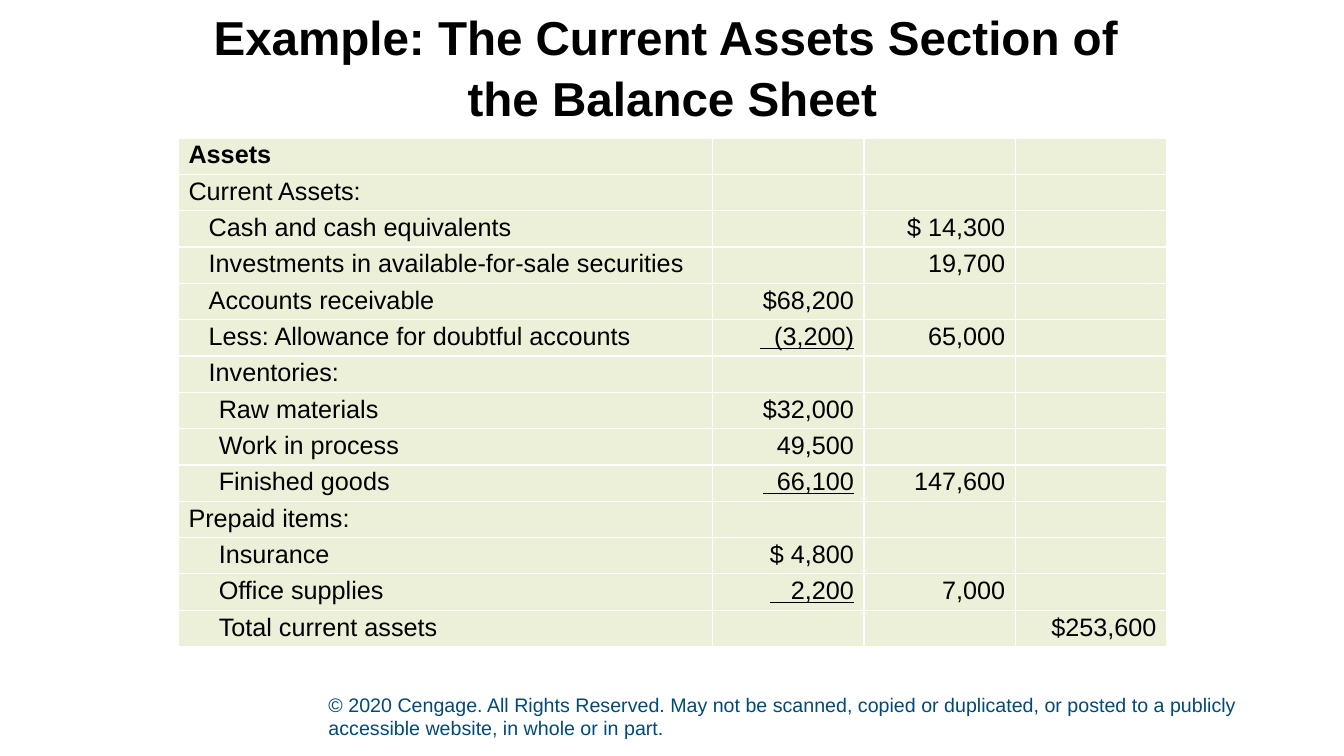
from pptx import Presentation, util as u
from pptx.dml.color import RGBColor
from pptx.enum import text

ROWS = [
    (0, "Assets", "", "", ""),
    (0, "Current Assets:", "", "", ""),
    (0.2, "Cash and cash equivalents", "", "$ 14,300", ""),
    (0.2, "Investments in available-for-sale securities", "", "19,700", ""),
    (0.2, "Accounts receivable", "$68,200", "", ""),
    (0.2, "Less: Allowance for doubtful accounts", "  (3,200)", "65,000", ""),
    (0.2, "Inventories:", "", "", ""),
    (0.3, "Raw materials", "$32,000", "", ""),
    (0.3, "Work in process", "49,500", "", ""),
    (0.3, "Finished goods", "  66,100", "147,600", ""),
    (0, "Prepaid items:", "", "", ""),
    (0.3, "Insurance", "$ 4,800", "", ""),
    (0.3, "Office supplies", "   2,200", "7,000", ""),
    (0.3, "Total current assets", "", "", "$253,600"),
]


def color(value):
    return RGBColor.from_string(value)


class Page:
    font = "Arial"
    ink = "000000"
    fill = "EDF0D8"

    def __init__(self, deck):
        self.page = deck.slides.add_slide(deck.slide_layouts[6])

    def span(self, para, words, size, ink=ink, bold=False, underline=False):
        span = para.add_run()
        span.text = words
        span.font.name = self.font
        span.font.size = u.Pt(size)
        span.font.color.rgb = color(ink)
        span.font.bold = bold
        span.font.underline = underline

    def box(self, place, lines, size, anchor, align=text.PP_ALIGN.LEFT, spacing=1.0, **style):
        box = self.page.shapes.add_textbox(*map(u.Inches, place))
        frame = box.text_frame
        frame.word_wrap = True
        frame.vertical_anchor = anchor
        para = frame.paragraphs[0]
        para.alignment = align
        para.line_spacing = spacing
        for index, line in enumerate(lines):
            if index:
                para.add_line_break()
            self.span(para, line, size, **style)

    def cell(self, cell, words, indent=0, align=text.PP_ALIGN.LEFT, **style):
        cell.fill.solid()
        cell.fill.fore_color.rgb = color(self.fill)
        cell.margin_left = cell.margin_right = u.Inches(0.1)
        cell.margin_top = cell.margin_bottom = u.Inches(0.03)
        para = cell.text_frame.paragraphs[0]
        para.alignment = align
        if indent:
            para._p.get_or_add_pPr().set("marL", str(u.Inches(indent)))
            para._p.get_or_add_pPr().set("indent", "0")
        if words:
            self.span(para, words, 18, **style)
        else:
            para.font.size = u.Pt(18)

    def table(self, place, widths, rows):
        frame = self.page.shapes.add_table(len(rows), len(widths), *map(u.Inches, place))
        table = frame.table
        table.first_row = table.horz_banding = False
        for column, width in zip(table.columns, widths):
            column.width = u.Inches(width)
        for index, (indent, label, *amounts) in enumerate(rows):
            table.rows[index].height = u.Inches(place[3] / len(rows))
            self.cell(table.cell(index, 0), label, indent, bold=index == 0)
            for column, amount in enumerate(amounts, 1):
                self.cell(table.cell(index, column), amount, align=text.PP_ALIGN.RIGHT,
                          underline=amount.startswith(" "))


def main():
    deck = Presentation()
    deck.slide_width = u.Inches(13.33)
    deck.slide_height = u.Inches(7.5)
    page = Page(deck)
    page.box((3.16, 6.89, 9.63, 0.5),
             ["© 2020 Cengage. All Rights Reserved. May not be scanned, copied or duplicated, "
              "or posted to a publicly accessible website, in whole or in part."],
             14, text.MSO_ANCHOR.BOTTOM, ink="004A78")
    page.box((0.92, 0.15, 11.5, 1),
             ["Example: The Current Assets Section of ", "the Balance Sheet"],
             34, text.MSO_ANCHOR.MIDDLE, text.PP_ALIGN.CENTER, 1.06, bold=True)
    page.table((1.77, 1.37, 9.8, 5.03), (5.3, 1.5, 1.5, 1.5), ROWS)
    deck.save("out.pptx")


if __name__ == "__main__":
    main()
